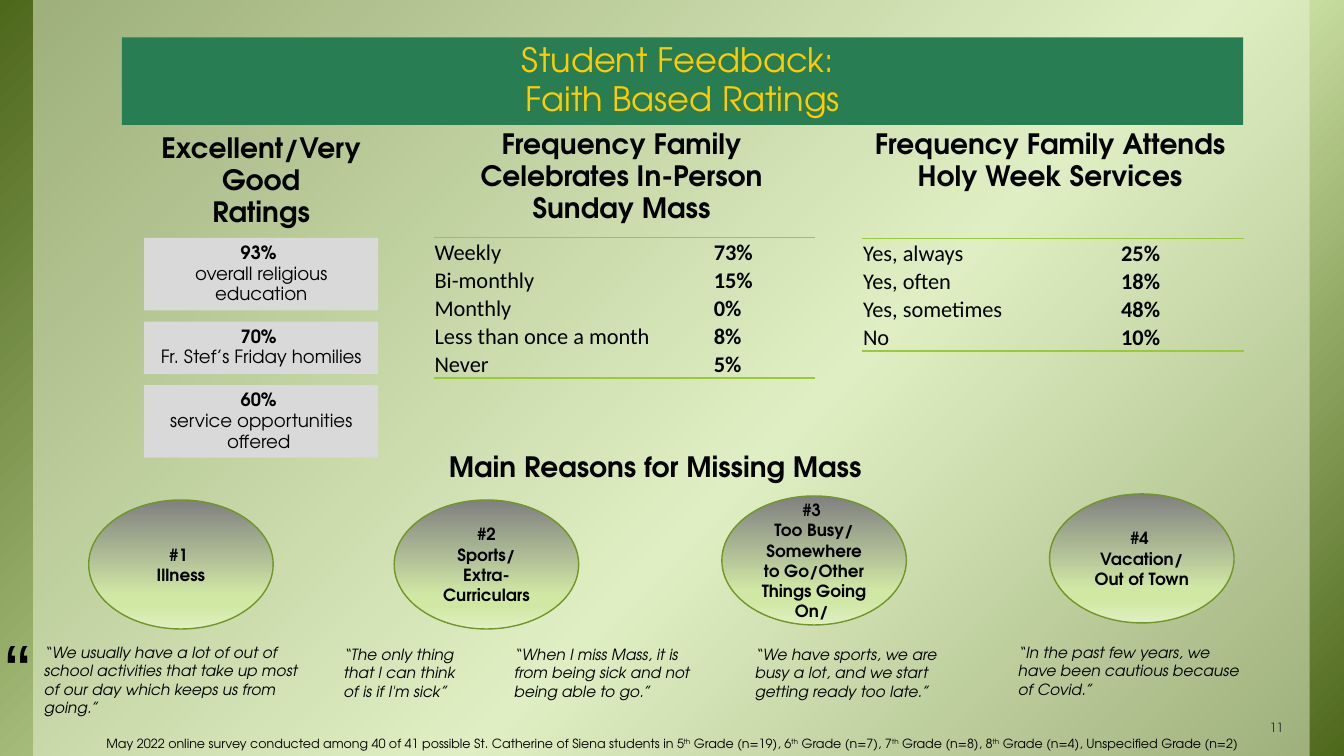
from lxml import etree
from pptx import Presentation
from pptx.dml.color import RGBColor
from pptx.enum.shapes import MSO_SHAPE
from pptx.enum.text import MSO_ANCHOR, MSO_AUTO_SIZE, PP_ALIGN
from pptx.oxml.ns import qn
from pptx.util import Inches, Pt

RECT, OVAL = MSO_SHAPE.RECTANGLE, MSO_SHAPE.OVAL
LEFT, CENTER, RIGHT = PP_ALIGN.LEFT, PP_ALIGN.CENTER, PP_ALIGN.RIGHT
TOP, MIDDLE, BOTTOM = MSO_ANCHOR.TOP, MSO_ANCHOR.MIDDLE, MSO_ANCHOR.BOTTOM
FIT, FIXED = MSO_AUTO_SIZE.SHAPE_TO_FIT_TEXT, MSO_AUTO_SIZE.NONE

BLACK = RGBColor(0x00, 0x00, 0x00)
PAGE = RGBColor(0xF2, 0xF2, 0xF2)
PALE_GREEN = RGBColor(0xEB, 0xF5, 0xD7)
BANNER_GREEN = RGBColor(0x29, 0x7D, 0x53)
GOLD = RGBColor(0xFF, 0xCC, 0x00)
RATING_GRAY = RGBColor(0xD9, 0xD9, 0xD9)
RULE_GREEN = RGBColor(0x99, 0xCB, 0x38)
OVAL_LINE = RGBColor(0x71, 0x96, 0x29)
NUMBER_GRAY = RGBColor(0x22, 0x30, 0x28)
DARK_GREEN = RGBColor(0x4D, 0x67, 0x1B)
LIGHT_GREEN = RGBColor(0xD6, 0xEA, 0xAF)
OVAL_GRAY = RGBColor(0x80, 0x80, 0x80)
OVAL_GREEN = RGBColor(0xD1, 0xE8, 0xA5)
OVAL_PALE = RGBColor(0xE0, 0xEF, 0xC3)

PAGE_STOPS = [(0, DARK_GREEN), (58, LIGHT_GREEN), (100, DARK_GREEN)]
OVAL_STOPS = [(0, OVAL_GRAY), (74, OVAL_GREEN), (83, OVAL_GREEN), (100, OVAL_PALE)]

DISPLAY_FONT, TABLE_FONT = "TeX Gyre Adventor", "Calibri"
PLAIN_TABLE_STYLE = "{2D5ABB26-0587-4C30-8999-92F81FD0307C}"

RATINGS = [
    (0.72, ["93% ", "overall religious education"]),
    (0.52, ["70% ", "Fr. Stef’s Friday homilies"]),
    (0.72, ["60% ", "service opportunities offered "]),
]
MASS_FREQUENCY = [("Weekly", "73%"), ("Bi-monthly", "15%"), ("Monthly", "0%"),
                  ("Less than once a month", "8%"), ("Never", "5%")]
HOLY_WEEK = [("Yes, always", "25%"), ("Yes, often", "18%"),
             ("Yes, sometimes", "48%"), ("No", "10%")]
HEADINGS = [
    (1.43, 1.27, 2.32, 1.06, ["Excellent/Very Good", "Ratings"]),
    (4.25, 1.23, 3.83, 1.06, ["Frequency Family Celebrates In-Person Sunday Mass"]),
    (8.5, 1.23, 3.83, 0.74, ["Frequency Family Attends Holy Week Services"]),
    (0, 4.43, 13, 0.42, ["Main Reasons for Missing Mass"]),
]
REASONS = [
    (0.88, 4.96, ["#1 ", "Illness"]),
    (3.91, 4.96, ["#2", "Sports/", "Extra-Curriculars"]),
    (7.16, 4.92, ["#3 ", "Too Busy/", "Somewhere to Go/Other Things Going On/ "]),
    (10.41, 4.9, ["#4 ", "Vacation/ Out of Town"]),
]
QUOTES = [
    (0.34, 6.33, 2.84, 0.84, "“We usually have a lot of out of school activities that "
                             "take up most of our day which keeps us from going.”"),
    (3.31, 6.35, 1.44, 0.66, "“The only thing that I can think of is if I'm sick”"),
    (5, 6.35, 2, 0.66, "“When I miss Mass, it is from being sick and not being able to go.”"),
    (7.39, 6.35, 2.19, 0.66, "“We have sports, we are busy a lot, and we start getting "
                             "ready too late.”"),
    (10, 6.33, 2.4, 0.66, "“In the past few years, we have been cautious because of Covid.”"),
]
# Text between carets is superscript
SURVEY_NOTE = ("May 2022 online survey conducted among 40 of 41 possible St. Catherine of "
               "Siena students in 5^th^ Grade (n=19), 6^th^ Grade (n=7), 7^th^ Grade (n=8), "
               "8^th^ Grade (n=4), Unspecified Grade (n=2)")


def write(frame, lines, size, font=DISPLAY_FONT, color=BLACK, bold=False, italic=False,
          lead_bold=False, align=CENTER, spacing=0.95):
    """Fill a text frame, one paragraph per line."""
    for number, line in enumerate(lines):
        paragraph = frame.paragraphs[0] if number == 0 else frame.add_paragraph()
        paragraph.alignment = align
        paragraph.line_spacing = spacing
        for part, words in enumerate(line.split("^")):
            run = paragraph.add_run()
            run.text = words
            run.font.name, run.font.size = font, Pt(size)
            run.font.bold = bold or (lead_bold and number == 0)
            run.font.italic = italic
            run.font.color.rgb = color
            if part % 2:
                run._r.get_or_add_rPr().set("baseline", "30000")


def set_frame(frame, anchor=TOP, fit=FIT):
    frame.word_wrap = True
    frame.auto_size = fit
    frame.vertical_anchor = anchor
    return frame


def add_text(slide, x, y, w, h, lines, size, anchor=TOP, fit=FIT, **style):
    box = slide.shapes.add_textbox(Inches(x), Inches(y), Inches(w), Inches(h))
    write(set_frame(box.text_frame, anchor, fit), lines, size, **style)
    return box


def add_panel(slide, kind, x, y, w, h, color=None, line=None):
    panel = slide.shapes.add_shape(kind, Inches(x), Inches(y), Inches(w), Inches(h))
    panel.shadow.inherit = False
    if color is not None:
        panel.fill.solid()
        panel.fill.fore_color.rgb = color
    if line is None:
        panel.line.fill.background()
    else:
        panel.line.color.rgb = line
        panel.line.width = Pt(1)
    return panel


def add_color(parent, color):
    return etree.SubElement(parent, qn("a:srgbClr"), val=str(color))


def set_gradient(shape, stops, angle):
    shape.fill.gradient()
    gradient = shape._element.spPr.find(qn("a:gradFill"))
    for child in list(gradient):
        gradient.remove(child)
    stop_list = etree.SubElement(gradient, qn("a:gsLst"))
    for position, color in stops:
        add_color(etree.SubElement(stop_list, qn("a:gs"), pos=str(position * 1000)), color)
    etree.SubElement(gradient, qn("a:lin"), ang=str(angle * 60000), scaled="0")


def add_rule(cell, side):
    rule = etree.Element(qn(side), w=str(Pt(1)))
    add_color(etree.SubElement(rule, qn("a:solidFill")), RULE_GREEN)
    cell._tc.get_or_add_tcPr().insert(0, rule)


def add_frequency_table(slide, x, y, widths, rows):
    row_height = 0.278
    table = slide.shapes.add_table(len(rows), 2, Inches(x), Inches(y), Inches(sum(widths)),
                                   Inches(row_height * len(rows))).table
    table.first_row = table.horz_banding = False
    table._tbl.tblPr.find(qn("a:tableStyleId")).text = PLAIN_TABLE_STYLE
    for column, width in zip(table.columns, widths):
        column.width = Inches(width)
    for r, row in enumerate(rows):
        for c, words in enumerate(row):
            cell = table.cell(r, c)
            cell.margin_left = cell.margin_right = cell.margin_top = Inches(0.01)
            cell.margin_bottom = 0
            cell.vertical_anchor = BOTTOM
            cell.fill.background()
            write(cell.text_frame, [words], 16, font=TABLE_FONT, bold=c == 1,
                  align=LEFT, spacing=1.0)
            if r == 0:
                add_rule(cell, "a:lnT")
            if r == len(rows) - 1:
                add_rule(cell, "a:lnB")


def add_backdrop(slide):
    slide.background.fill.solid()
    slide.background.fill.fore_color.rgb = PAGE
    set_gradient(add_panel(slide, RECT, 0, 0, 13.33, 7.5), PAGE_STOPS, 45)
    veil = add_panel(slide, RECT, 0.33, 0, 12.66, 7.5, PALE_GREEN)
    veil_color = veil._element.spPr.find(qn("a:solidFill"))[0]
    etree.SubElement(veil_color, qn("a:alpha"), val="50000")


def main():
    deck = Presentation()
    deck.slide_width, deck.slide_height = Inches(13.33), Inches(7.5)
    slide = deck.slides.add_slide(deck.slide_layouts[6])
    add_backdrop(slide)

    # Title banner
    banner = add_panel(slide, RECT, 1.21, 0.37, 11.12, 0.87, BANNER_GREEN)
    write(set_frame(banner.text_frame), ["Student Feedback: ", "Faith Based Ratings"], 24,
          color=GOLD)

    # Ratings, stacked with equal gaps
    top = 2.36
    for height, lines in RATINGS:
        rating = add_panel(slide, RECT, 1.43, top, 2.32, height, RATING_GRAY)
        write(set_frame(rating.text_frame), lines, 13, lead_bold=True)
        top += height + 0.11

    # Section headings and frequency tables
    for x, y, w, h, lines in HEADINGS:
        add_text(slide, x, y, w, h, lines, 20, bold=True)
    add_frequency_table(slide, 4.3, 2.36, (2.77, 1.01), MASS_FREQUENCY)
    add_frequency_table(slide, 8.55, 2.37, (2.56, 1.23), HOLY_WEEK)

    # Reasons for missing Mass
    for x, y, lines in REASONS:
        reason = add_panel(slide, OVAL, x, y, 1.83, 1.28, line=OVAL_LINE)
        set_gradient(reason, OVAL_STOPS, 90)
        write(set_frame(reason.text_frame, MIDDLE, FIXED), lines, 12, bold=True, spacing=1.0)

    # Student quotes
    add_text(slide, -0.04, 6.2, 0.75, 0.96, ["“"], 54, font="Arial", align=LEFT)
    for x, y, w, h, quote in QUOTES:
        add_text(slide, x, y, w, h, [quote], 11, italic=True, align=LEFT, spacing=1.0)

    # Survey note and page number
    add_text(slide, 0, 7.26, 13.33, 0.24, [SURVEY_NOTE], 9)
    number = add_text(slide, 11.65, 7.01, 1.21, 0.35, ["11"], 9, BOTTOM, FIXED,
                      color=NUMBER_GRAY, align=RIGHT, spacing=1.0).text_frame
    number.margin_left = number.margin_right = Inches(0.13)
    number.margin_top = number.margin_bottom = Inches(0.07)

    deck.save("out.pptx")


if __name__ == "__main__":
    main()
